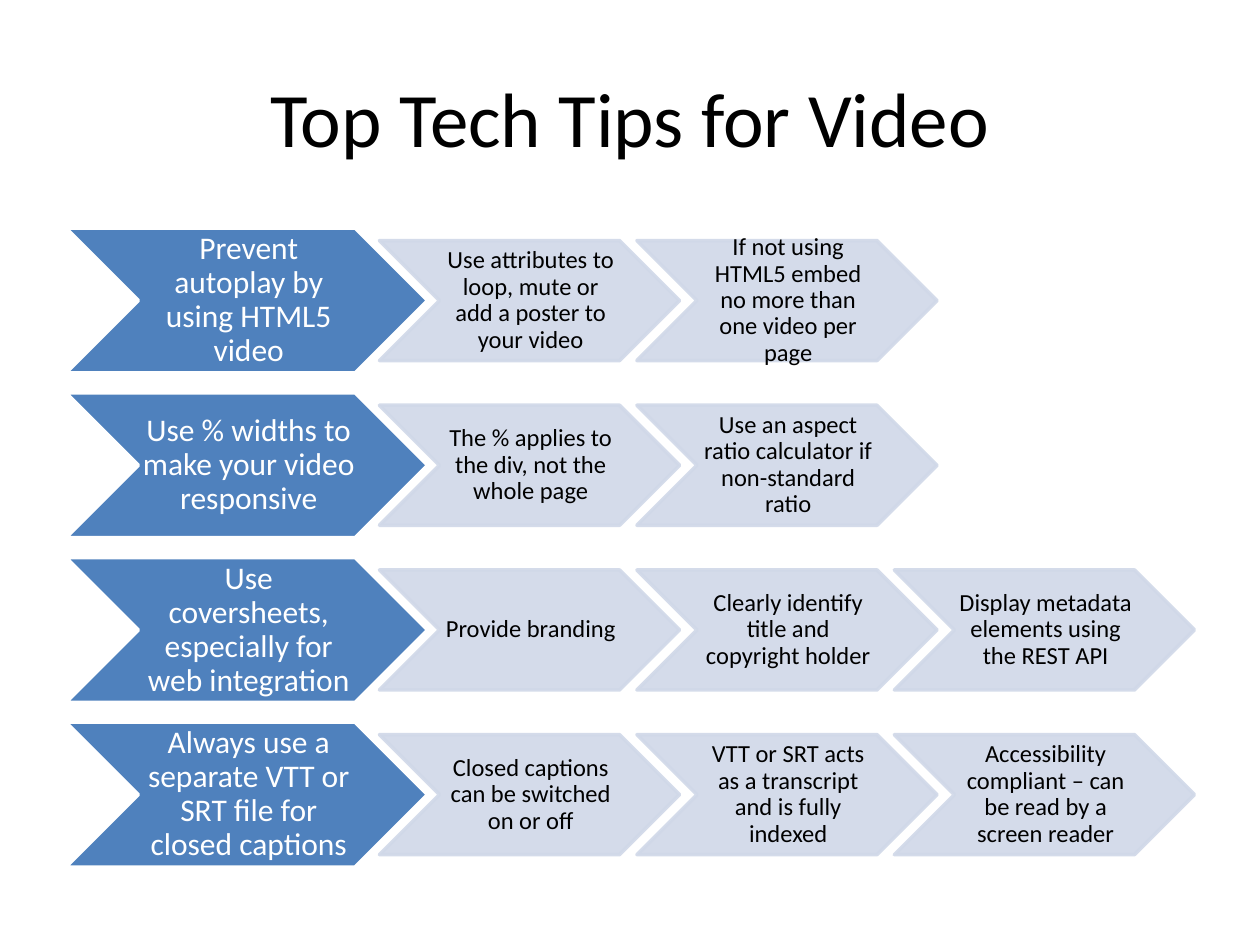
from dataclasses import dataclass

from lxml.etree import SubElement
from pptx import Presentation
from pptx.dml.color import RGBColor
from pptx.dml.fill import FillFormat
from pptx.enum.shapes import MSO_SHAPE as Preset
from pptx.enum.text import MSO_ANCHOR as Anchor, PP_ALIGN as Align
from pptx.oxml.ns import qn
from pptx.slide import Slide
from pptx.text.text import TextFrame
from pptx.util import Cm, Pt


@dataclass(frozen=True)
class Theme:
    font: str = "Calibri"
    black: RGBColor = RGBColor(0x00, 0x00, 0x00)
    white: RGBColor = RGBColor(0xFF, 0xFF, 0xFF)
    blue: RGBColor = RGBColor(0x4F, 0x81, 0xBD)
    pale_blue: RGBColor = RGBColor(0xD0, 0xD8, 0xE8)
    title_size: float = 44
    tip_size: float = 18
    detail_size: float = 14
    outline: float = 2


@dataclass(frozen=True)
class ChevronStyle:
    width: float
    height: float
    fill: RGBColor
    line: RGBColor
    opacity: int
    ink: RGBColor
    size: float
    left_inset: float


@dataclass(frozen=True)
class Tip:
    headline: str
    details: tuple[str, ...]


THEME = Theme()
TIP_STYLE = ChevronStyle(7.29, 2.92, THEME.blue, THEME.white, 100,
                         THEME.white, THEME.tip_size, 0.08)
DETAIL_STYLE = ChevronStyle(6.05, 2.42, THEME.pale_blue, THEME.pale_blue, 90,
                            THEME.black, THEME.detail_size, 0.05)

TIP_LEFT = 1.33
DETAIL_LEFT = 7.65
DETAIL_PITCH = 5.19
FIRST_ROW_MIDDLE = 6.06
ROW_PITCH = 3.32

TIPS = (
    Tip("Prevent autoplay by using HTML5 video",
        ("Use attributes to loop, mute or add a poster to your video",
         "If not using HTML5 embed no more than one video per page")),
    Tip("Use % widths to make your video responsive",
        ("The % applies to the div, not the whole page",
         "Use an aspect ratio calculator if non-standard ratio")),
    Tip("Use coversheets, especially for web integration",
        ("Provide branding",
         "Clearly identify title and copyright holder",
         "Display metadata elements using the REST API")),
    Tip("Always use a separate VTT or SRT file for closed captions",
        ("Closed captions can be switched on or off",
         "VTT or SRT acts as a transcript and is fully indexed",
         "Accessibility compliant – can be read by a screen reader")),
)


def write(frame: TextFrame, text: str, size: float, ink: RGBColor,
          spacing: float = 1.0) -> None:
    frame.word_wrap = True
    frame.vertical_anchor = Anchor.MIDDLE
    paragraph = frame.paragraphs[0]
    paragraph.alignment = Align.CENTER
    paragraph.line_spacing = spacing
    run = paragraph.add_run()
    run.text = text
    run.font.name = THEME.font
    run.font.size = Pt(size)
    run.font.color.rgb = ink


def paint(fill: FillFormat, color: RGBColor) -> None:
    fill.solid()
    fill.fore_color.rgb = color


def draw_title(slide: Slide, text: str) -> None:
    title = slide.shapes.add_textbox(Cm(1.27), Cm(0.76), Cm(22.86), Cm(3.18))
    write(title.text_frame, text, THEME.title_size, THEME.black)


def draw_chevron(slide: Slide, left: float, middle: float, text: str,
                 style: ChevronStyle) -> None:
    chevron = slide.shapes.add_shape(
        Preset.CHEVRON, Cm(left), Cm(middle - style.height / 2),
        Cm(style.width), Cm(style.height))
    chevron.shadow.inherit = False
    paint(chevron.fill, style.fill)
    paint(chevron.line.fill, style.line)
    chevron.line.width = Pt(THEME.outline)
    if style.opacity < 100:
        for color in chevron.element.spPr.iter(qn("a:srgbClr")):
            SubElement(color, qn("a:alpha"), val=str(style.opacity * 1000))
    frame = chevron.text_frame
    frame.margin_left = Cm(style.left_inset)
    frame.margin_right = Cm(0)
    frame.margin_top = frame.margin_bottom = Cm(0.03)
    write(frame, text, style.size, style.ink, 0.9)


def draw_tip(slide: Slide, tip: Tip, middle: float) -> None:
    draw_chevron(slide, TIP_LEFT, middle, tip.headline, TIP_STYLE)
    for column, detail in enumerate(tip.details):
        draw_chevron(slide, DETAIL_LEFT + column * DETAIL_PITCH, middle,
                     detail, DETAIL_STYLE)


def main() -> None:
    deck = Presentation()
    deck.slide_width, deck.slide_height = Cm(25.4), Cm(19.05)
    slide = deck.slides.add_slide(deck.slide_layouts[6])
    paint(slide.background.fill, THEME.white)
    draw_title(slide, "Top Tech Tips for Video")
    for row, tip in enumerate(TIPS):
        draw_tip(slide, tip, FIRST_ROW_MIDDLE + row * ROW_PITCH)
    deck.save("out.pptx")


if __name__ == "__main__":
    main()
